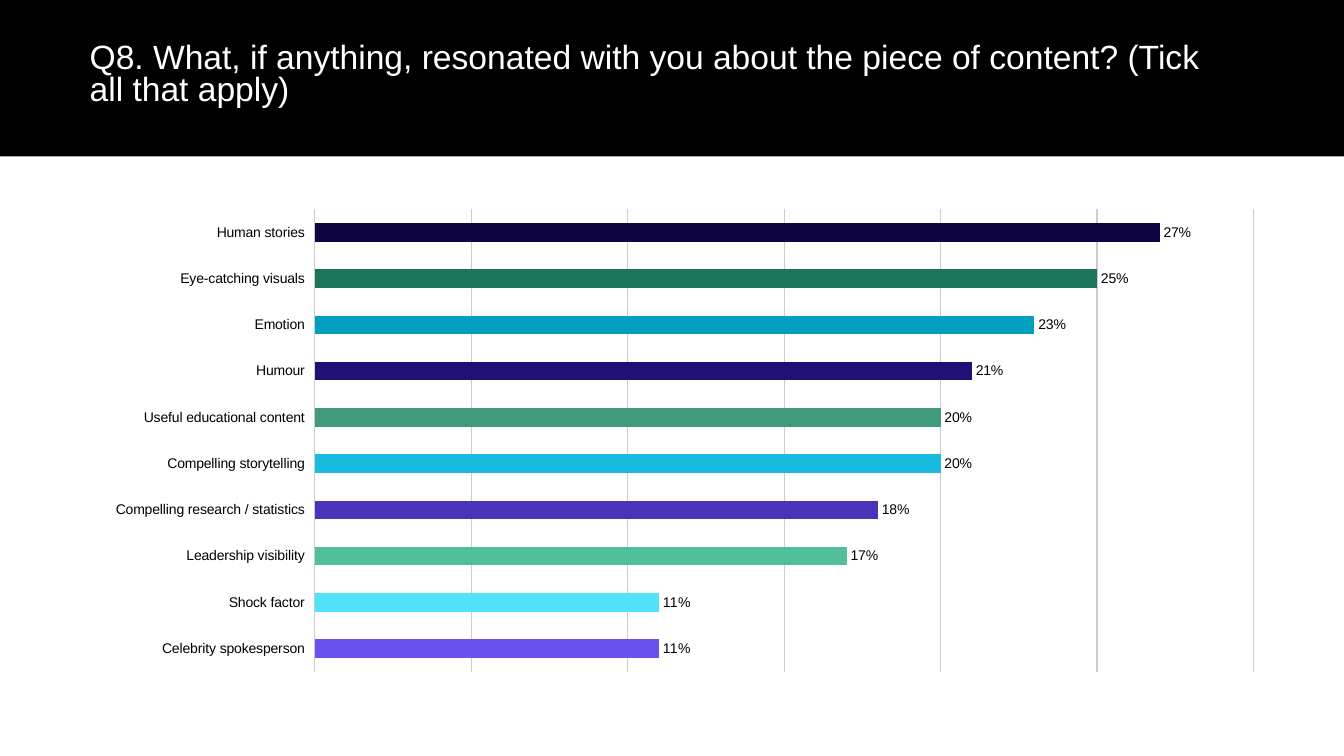
from lxml import etree
from pptx import Presentation
from pptx.chart.data import CategoryChartData
from pptx.dml.color import RGBColor
from pptx.enum.chart import XL_CHART_TYPE, XL_LABEL_POSITION, XL_TICK_LABEL_POSITION, XL_TICK_MARK
from pptx.enum.shapes import MSO_SHAPE
from pptx.enum.text import MSO_ANCHOR
from pptx.oxml.ns import qn
from pptx.util import Cm, Pt

BAR = XL_CHART_TYPE.BAR_CLUSTERED
OUTER = XL_LABEL_POSITION.OUTSIDE_END
LOW = XL_TICK_LABEL_POSITION.LOW
NO_TICK = XL_TICK_MARK.NONE
RECT = MSO_SHAPE.RECTANGLE
MIDDLE = MSO_ANCHOR.MIDDLE

COLORS = {"black": "000000", "white": "FFFFFF", "grid": "CCCCCC"}
TITLE = ("Q8. What, if anything, resonated with you about the piece of content? "
         "(Tick all that apply)")
# Answer, share and bar colour, from the bottom bar to the top one
ANSWERS = [
    ("Celebrity spokesperson", 0.11, "6951EF"),
    ("Shock factor", 0.11, "52E2FA"),
    ("Leadership visibility", 0.17, "51BE9C"),
    ("Compelling research / statistics", 0.18, "4933B9"),
    ("Compelling storytelling", 0.20, "18BBDD"),
    ("Useful educational content", 0.20, "409A7C"),
    ("Humour", 0.21, "211176"),
    ("Emotion", 0.23, "00A0BE"),
    ("Eye-catching visuals", 0.25, "1B755A"),
    ("Human stories", 0.27, "0F0542"),
]


def assign(item, values):
    for name, value in values.items():
        setattr(item, name, value)


def paint(fill, color):
    fill.solid()
    fill.fore_color.rgb = RGBColor.from_string(color)


def style(font, size, color, face="Arial"):
    assign(font, {"size": Pt(size), "name": face, "bold": False})
    font.color.rgb = RGBColor.from_string(color)


def add_band(slide, width):
    band = slide.shapes.add_shape(RECT, 0, 0, width, Cm(3.94))
    band.shadow.inherit = False
    paint(band.fill, COLORS["black"])
    band.line.fill.background()


def add_title(slide):
    box = slide.shapes.add_textbox(Cm(2.01), Cm(0.89), Cm(29.16), Cm(2.03))
    frame = box.text_frame
    assign(frame, {"word_wrap": True, "vertical_anchor": MIDDLE, "text": TITLE})
    para = frame.paragraphs[0]
    para.line_spacing = 0.8
    style(para.runs[0].font, 24, COLORS["white"])


def style_axes(chart):
    cats, vals = chart.category_axis, chart.value_axis
    assign(cats, {"tick_label_position": LOW, "major_tick_mark": NO_TICK,
                  "minor_tick_mark": NO_TICK, "has_major_gridlines": False})
    cats.format.line.fill.background()
    style(cats.tick_labels.font, 10, COLORS["black"])
    assign(vals, {"visible": False, "minimum_scale": 0, "maximum_scale": 0.3,
                  "major_unit": 0.05, "has_major_gridlines": True})
    assign(vals.tick_labels, {"number_format": "0%", "number_format_is_linked": False})
    grid = vals.major_gridlines.format.line
    grid.width = Pt(0.75)
    paint(grid.fill, COLORS["grid"])


def style_bars(plot):
    assign(plot, {"gap_width": 150, "vary_by_categories": False, "has_data_labels": True})
    labels = plot.data_labels
    assign(labels, {"show_value": True, "position": OUTER,
                    "number_format": "0%", "number_format_is_linked": False})
    style(labels.font, 10, COLORS["black"])
    for index, (_, _, color) in enumerate(ANSWERS):
        paint(plot.series[0].points[index].format.fill, color)


def fix_plot(chart, bounds):
    """Place the inner plot area by fractions of the chart."""
    area = chart._chartSpace.chart.plotArea
    layout = area.find(qn("c:layout"))
    if layout is None:
        layout = etree.Element(qn("c:layout"))
        area.insert(0, layout)
    manual = etree.SubElement(layout, qn("c:manualLayout"))
    values = {"layoutTarget": "inner", "xMode": "edge", "yMode": "edge", **bounds}
    for name, value in values.items():
        etree.SubElement(manual, qn(f"c:{name}")).set("val", str(value))


def add_bars(slide):
    data = CategoryChartData(number_format="0%")
    data.categories = [name for name, _, _ in ANSWERS]
    data.add_series("Series 1", [share for _, share, _ in ANSWERS])
    frame = slide.shapes.add_chart(BAR, Cm(2.24), Cm(5.03), Cm(29.95), Cm(12.14), data)
    chart = frame.chart
    assign(chart, {"has_legend": False, "has_title": False})
    style(chart.font, 12, COLORS["black"], "Calibri")
    style_axes(chart)
    style_bars(chart.plots[0])
    fix_plot(chart, {"x": 0.19, "y": 0.02, "w": 0.79, "h": 0.96})


def main():
    deck = Presentation()
    assign(deck, {"slide_width": Cm(33.87), "slide_height": Cm(19.05)})
    slide = deck.slides.add_slide(deck.slide_layouts[6])
    add_band(slide, deck.slide_width)
    add_bars(slide)
    add_title(slide)
    deck.save("out.pptx")


if __name__ == "__main__":
    main()
